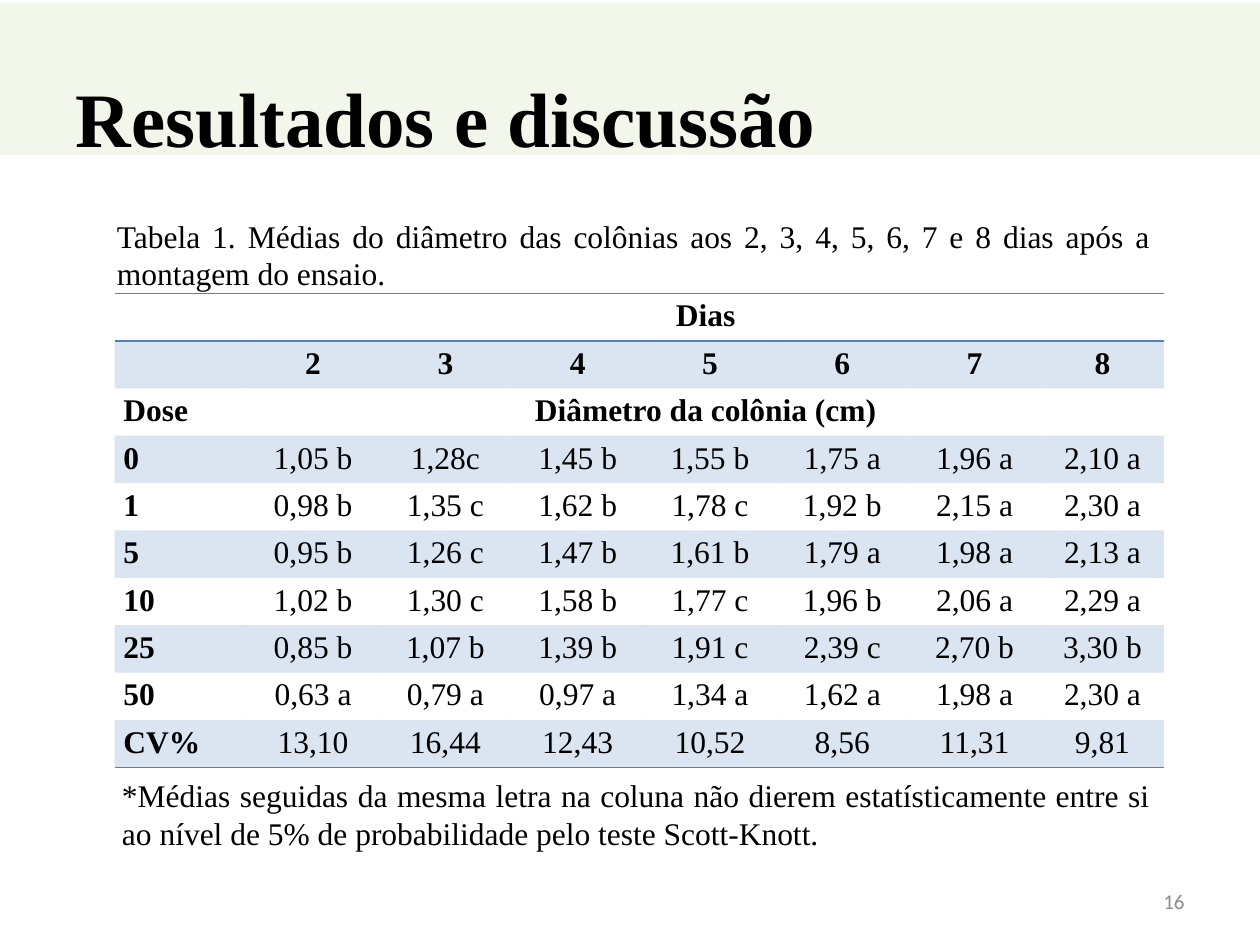
from lxml.etree import SubElement
from pptx import Presentation
from pptx.dml.color import RGBColor
from pptx.enum.shapes import MSO_SHAPE
from pptx.enum.text import MSO_ANCHOR, PP_ALIGN
from pptx.oxml.ns import qn
from pptx.util import Inches, Pt

# Content
TITLE = "Resultados e discussão"
CAPTION = ("Tabela 1. Médias do diâmetro das colônias aos 2, 3, 4, 5, 6, 7 e 8 "
           "dias após a montagem do ensaio.")
NOTE = ("*Médias seguidas da mesma letra na coluna não dierem estatísticamente "
        "entre si ao nível de 5% de probabilidade pelo teste Scott-Knott.")
NUMBER = "16"
ROWS = [
    ["", "Dias"],
    ["", "2", "3", "4", "5", "6", "7", "8"],
    ["Dose", "Diâmetro da colônia (cm)"],
    ["0", "1,05 b", "1,28c", "1,45 b", "1,55 b", "1,75 a", "1,96 a", "2,10 a"],
    ["1", "0,98 b", "1,35 c", "1,62 b", "1,78 c", "1,92 b", "2,15 a", "2,30 a"],
    ["5", "0,95 b", "1,26 c", "1,47 b", "1,61 b", "1,79 a", "1,98 a", "2,13 a"],
    ["10", "1,02 b", "1,30 c", "1,58 b", "1,77 c", "1,96 b", "2,06 a", "2,29 a"],
    ["25", "0,85 b", "1,07 b", "1,39 b", "1,91 c", "2,39 c", "2,70 b", "3,30 b"],
    ["50", "0,63 a", "0,79 a", "0,97 a", "1,34 a", "1,62 a", "1,98 a", "2,30 a"],
    ["CV%", "13,10", "16,44", "12,43", "10,52", "8,56", "11,31", "9,81"],
]
WIDTHS = [1.05] * 7 + [0.98]
HEAD = 3  # bold rows at the top
RULES = {0: ["lnT", "lnB"], len(ROWS) - 1: ["lnB"]}
SERIF, BLUE = "Times New Roman", "4F81BD"
PLAIN = "{2D5ABB26-0587-4C30-8999-92F81FD0307C}"  # no style, no grid


def paint(fill, color, alpha):
    fill.solid()
    fill.fore_color.rgb = RGBColor.from_string(color)
    node = fill._xPr.find(qn("a:solidFill"))[0]
    SubElement(node, qn("a:alpha"), val=str(alpha * 1000))


def write(frame, text, size, align, bold=False, face=SERIF, color="000000"):
    frame.text = text
    para = frame.paragraphs[0]
    para.alignment = align
    font = para.font
    font.name, font.size, font.bold = face, Pt(size), bold
    font.color.rgb = RGBColor.from_string(color)
    return para


def rule(cell, sides):
    props = cell._tc.get_or_add_tcPr()
    for spot, side in enumerate(sides):
        line = SubElement(props, qn("a:" + side), w=str(Pt(1)))
        fill = SubElement(line, qn("a:solidFill"))
        SubElement(fill, qn("a:srgbClr"), val=BLUE)
        props.insert(spot, line)  # borders go before the fill


def label(slide, box, text, size, align, **look):
    shape = slide.shapes.add_textbox(*map(Inches, box))
    shape.text_frame.word_wrap = True
    write(shape.text_frame, text, size, align, **look)
    return shape


def grid(slide):
    size = len(ROWS), len(WIDTHS)
    frame = slide.shapes.add_table(*size, *map(Inches, (0.91, 2.33, 8.32, 3.76)))
    table = frame.table
    table.first_row = table.horz_banding = False
    table._tbl.tblPr.find(qn("a:tableStyleId")).text = PLAIN
    for col, width in zip(table.columns, WIDTHS):
        col.width = Inches(width)
    for r, row in enumerate(ROWS):
        for c in range(len(WIDTHS)):
            cell = table.cell(r, c)
            cell.margin_left = cell.margin_right = Inches(0.07)
            cell.margin_top = cell.margin_bottom = 0
            para = write(cell.text_frame, row[c] if c < len(row) else "", 18,
                         PP_ALIGN.CENTER if c else PP_ALIGN.LEFT,
                         bold=r < HEAD or c == 0)
            para.line_spacing = 1.15
            if r % 2:
                paint(cell.fill, BLUE, 20)
            else:
                cell.fill.background()
            rule(cell, RULES.get(r, []))
        if len(row) == 2:
            table.cell(r, 1).merge(table.cell(r, len(WIDTHS) - 1))


def main():
    deck = Presentation()
    deck.slide_width, deck.slide_height = Inches(10), Inches(7.5)
    slide = deck.slides.add_slide(deck.slide_layouts[5])

    # Band behind the title
    band = slide.shapes.add_shape(MSO_SHAPE.RECTANGLE,
                                  *map(Inches, (0, 0.02, 10, 1.21)))
    band.shadow.inherit = False
    band.line.fill.background()
    paint(band.fill, "D7E4BD", 30)
    title = slide.shapes.title
    title._element.addprevious(band._element)

    # Title
    title.left, title.top, title.width, title.height = map(
        Inches, (0.5, 0.3, 9, 1.25))
    title.text_frame.vertical_anchor = MSO_ANCHOR.MIDDLE
    write(title.text_frame, TITLE, 44, PP_ALIGN.LEFT, bold=True)

    # Table with caption, note and page number
    grid(slide)
    label(slide, (0.83, 1.67, 8.4, 0.71), CAPTION, 18, PP_ALIGN.JUSTIFY)
    label(slide, (0.87, 6.11, 8.36, 0.71), NOTE, 18, PP_ALIGN.JUSTIFY)
    page = label(slide, (7.17, 6.95, 2.33, 0.4), NUMBER, 12, PP_ALIGN.RIGHT,
                 face="Calibri", color="8C8C8C")
    page.text_frame.vertical_anchor = MSO_ANCHOR.MIDDLE
    deck.save("out.pptx")


if __name__ == "__main__":
    main()
